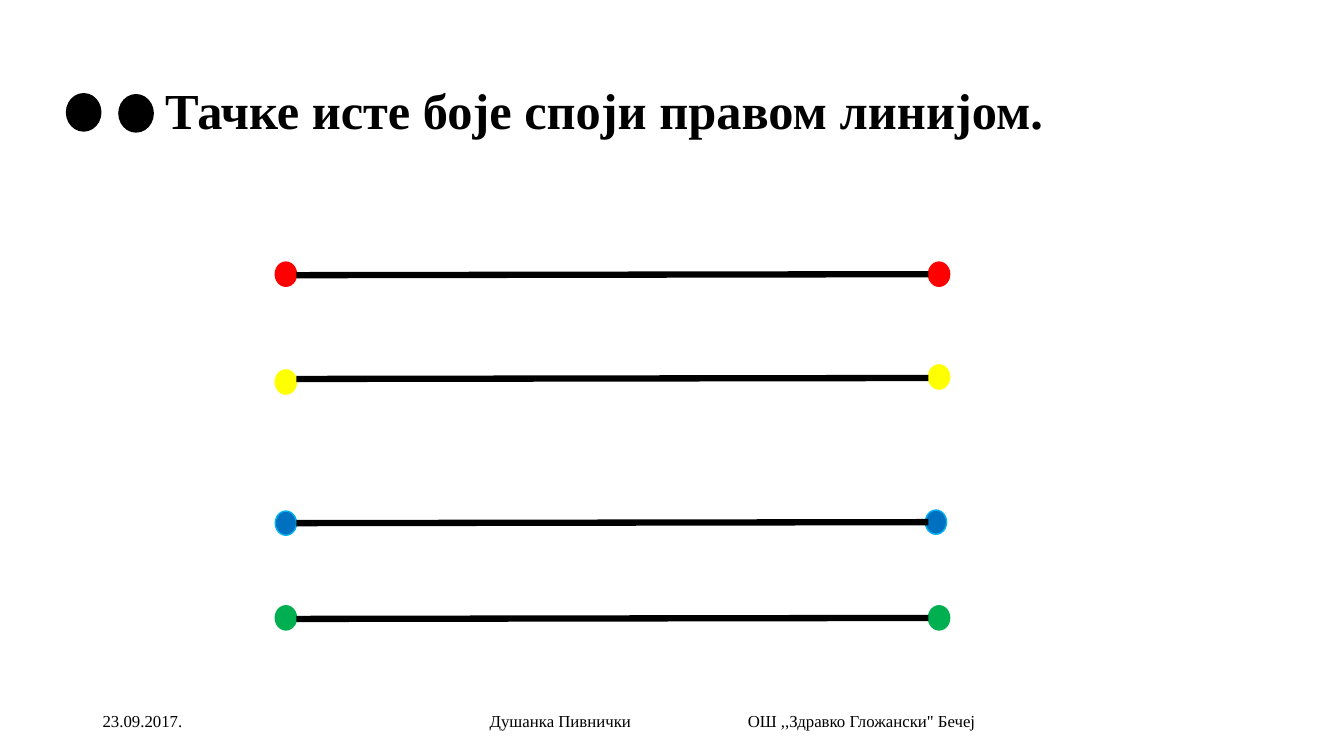
from lxml.etree import SubElement
from pptx import Presentation
from pptx.dml.color import RGBColor
from pptx.enum.shapes import MSO_CONNECTOR, MSO_SHAPE
from pptx.enum.text import MSO_ANCHOR
from pptx.oxml.ns import qn
from pptx.util import Inches, Pt

WIDTH, HEIGHT = Inches(13.33), Inches(7.5)
FONT = "Times New Roman"
BLACK = "000000"
LARGE_DOT = (2.55, 4.93)
SMALL_DOT = (1.58, 3.2)
LEFT_DOT, LINE_START, LINE_END = 20.48, 22.05, 69.08
LINE_RISE = 0.13

PAIRS = [
    ("FF0000", "FF0000", 34.67, 69.08, 34.67, 36.4),
    ("FFFF00", "FFFF00", 48.93, 69.08, 48.27, 50.13),
    ("0070C0", "00B0F0", 67.6, 68.85, 67.47, 69.2),
    ("00B050", "00B050", 80.13, 69.08, 80.13, 81.87),
]
FOOTERS = [
    ("23.09.2017.", 6.9, 22.5),
    ("Душанка Пивнички", 35.7, 17),
    ("ОШ ,,Здравко Гложански\" Бечеј", 54.9, 25),
]


def across(percent):
    return round(WIDTH * percent / 100)


def down(percent):
    return round(HEIGHT * percent / 100)


def color(value):
    return RGBColor.from_string(value)


def add_text(page, text, left, top, width, height, size, bold=False, spacing=1.0):
    box = page.shapes.add_textbox(across(left), down(top), across(width), down(height))
    frame = box.text_frame
    frame.word_wrap = True
    frame.vertical_anchor = MSO_ANCHOR.MIDDLE
    para = frame.paragraphs[0]
    para.line_spacing = spacing
    span = para.add_run()
    span.text = text
    span.font.name = FONT
    span.font.size = Pt(size)
    span.font.bold = bold
    span.font.color.rgb = color(BLACK)


def add_dot(page, left, top, size, fill, outline):
    width, height = size
    dot = page.shapes.add_shape(
        MSO_SHAPE.OVAL, across(left), down(top), across(width), down(height))
    dot.shadow.inherit = False
    dot.fill.solid()
    dot.fill.fore_color.rgb = color(fill)
    dot.line.color.rgb = color(outline)
    dot.line.width = Pt(1)


def add_line(page, top):
    line = page.shapes.add_connector(
        MSO_CONNECTOR.STRAIGHT, across(LINE_START), down(top),
        across(LINE_END), down(top - LINE_RISE))
    line.line.color.rgb = color(BLACK)
    line.line.width = Pt(4.5)
    SubElement(line.element.spPr, qn("a:effectLst"))


def main():
    deck = Presentation()
    deck.slide_width, deck.slide_height = WIDTH, HEIGHT
    page = deck.slides.add_slide(deck.slide_layouts[6])

    add_text(page, "Тачке исте боје споји правом линијом.",
             11.55, 5.33, 81.6, 19.33, 36, bold=True, spacing=0.9)
    for text, left, width in FOOTERS:
        add_text(page, text, left, 92.67, width, 5.33, 12)

    for left, top in [(4.95, 12.4), (8.85, 12.53)]:
        add_dot(page, left, top, LARGE_DOT, BLACK, BLACK)
    for fill, outline, left_top, right, right_top, line_top in PAIRS:
        add_dot(page, LEFT_DOT, left_top, SMALL_DOT, fill, outline)
        add_dot(page, right, right_top, SMALL_DOT, fill, outline)
        add_line(page, line_top)

    deck.save("out.pptx")


if __name__ == "__main__":
    main()
